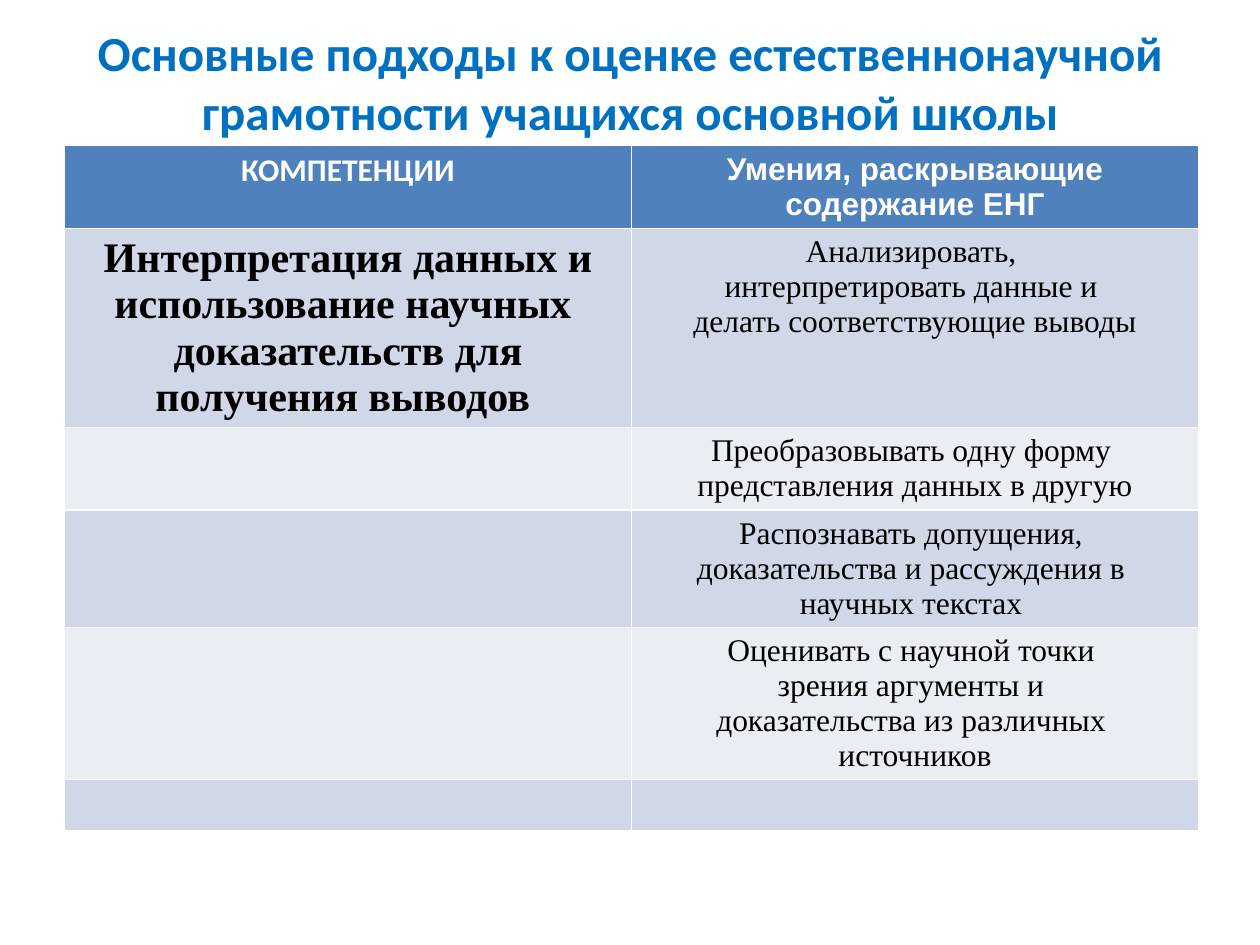
import pptx
import pptx.dml.color
import pptx.enum.text
import pptx.util

Cm = pptx.util.Cm
HEAD, DARK, PALE = "4F81BD", "D0D8E8", "E9EDF4"
SERIF = "Times New Roman"
LEFT_HEAD = {"name": "Calibri", "size": 18, "bold": True, "color": "FFFFFF"}
RIGHT_HEAD = {**LEFT_HEAD, "name": "Arial"}
SKILL = {"name": SERIF, "size": 18, "bold": False, "color": "000000"}
TOPIC = {**SKILL, "size": 24, "bold": True}
TITLE = {"name": "Calibri", "size": 28, "bold": True, "color": "0070C0"}

ROWS = [
    (1.65, ["КОМПЕТЕНЦИИ"], ["Умения, раскрывающие содержание ЕНГ"]),
    (4.01, ["Интерпретация данных и использование научных ",
            "доказательств для получения выводов "],
     ["Анализировать, ", "интерпретировать данные и ",
      "делать соответствующие выводы"]),
    (1.65, [], ["Преобразовывать одну форму ",
                "представления данных в другую"]),
    (2.37, [], ["Распознавать допущения, ",
                "доказательства и рассуждения в ", "научных текстах "]),
    (3.07, [], ["Оценивать c научной точки ", "зрения аргументы и ",
                "доказательства из различных ", "источников"]),
    (1.03, [], []),
]


def tint(color, code):
    color.rgb = pptx.dml.color.RGBColor.from_string(code)


def style(font, form):
    for key, value in form.items():
        if key == "color":
            tint(font.color, value)
        else:
            setattr(font, key, pptx.util.Pt(value) if key == "size" else value)


def write(frame, lines, form):
    for i, line in enumerate(lines):
        para = frame.add_paragraph() if i else frame.paragraphs[0]
        para.alignment = pptx.enum.text.PP_ALIGN.CENTER
        run = para.add_run()
        run.text = line
        style(run.font, form)


def place(shape, box):
    for key, value in box.items():
        setattr(shape, key, Cm(value))


def add_title(slide):
    title = slide.shapes.title
    place(title, {"left": 1.27, "top": 0.76, "width": 22.86, "height": 1.75})
    frame = title.text_frame
    frame.auto_size = pptx.enum.text.MSO_AUTO_SIZE.NONE
    frame.vertical_anchor = pptx.enum.text.MSO_ANCHOR.MIDDLE
    write(frame, ["Основные подходы к оценке естественнонаучной "
                  "грамотности учащихся основной школы"], TITLE)


def add_grid(slide):
    total = sum(row[0] for row in ROWS)
    table = slide.shapes.add_table(
        len(ROWS), 2, Cm(1.3), Cm(2.93), Cm(22.86), Cm(total)).table
    for i, (height, *texts) in enumerate(ROWS):
        table.rows[i].height = Cm(height)
        forms = (TOPIC, SKILL) if i else (LEFT_HEAD, RIGHT_HEAD)
        shade = (DARK if i % 2 else PALE) if i else HEAD
        for cell, lines, form in zip(table.rows[i].cells, texts, forms):
            cell.fill.solid()
            tint(cell.fill.fore_color, shade)
            write(cell.text_frame, lines, form)


def main():
    deck = pptx.Presentation()
    deck.slide_width, deck.slide_height = Cm(25.4), Cm(19.05)
    slide = deck.slides.add_slide(deck.slide_layouts[5])
    add_title(slide)
    add_grid(slide)
    deck.save("out.pptx")


if __name__ == "__main__":
    main()
